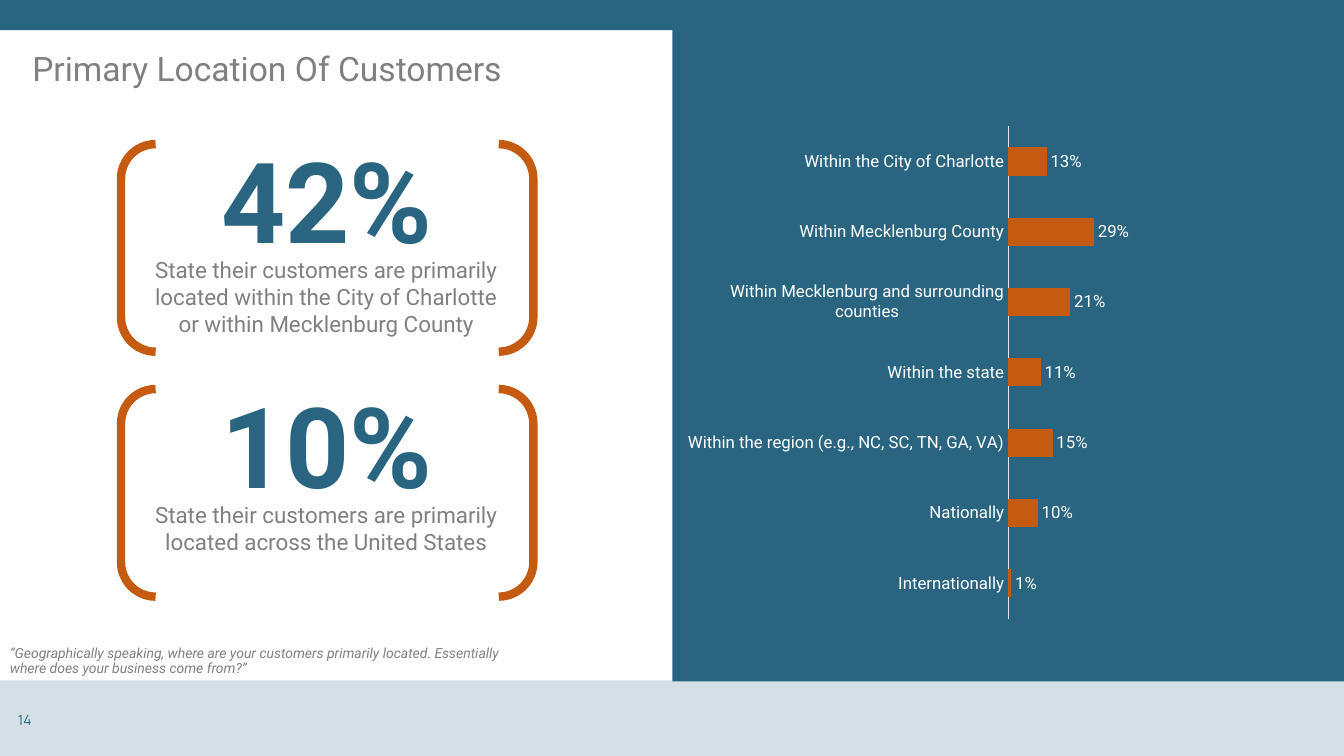
from lxml import etree
from pptx import Presentation
from pptx.chart.data import CategoryChartData as ChartData
from pptx.dml.color import RGBColor
from pptx.enum.chart import XL_CHART_TYPE as Kind, XL_LABEL_POSITION as Spot
from pptx.enum.chart import XL_TICK_MARK as Tick
from pptx.enum.shapes import MSO_SHAPE as Shape
from pptx.enum.text import MSO_ANCHOR as Anchor, MSO_AUTO_SIZE as Fit, PP_ALIGN as Align
from pptx.oxml.ns import qn
from pptx.util import Inches, Pt

TEAL, RUST, GRAY, WHITE = "296581", "C55A11", "808080", "FFFFFF"
PALE, RULE = "D4E0E6", "E7E6E6"

PLACES = [
    ("Internationally", 0.01),
    ("Nationally", 0.10),
    ("Within the region (e.g., NC, SC, TN, GA, VA)", 0.15),
    ("Within the state", 0.11),
    ("Within Mecklenburg and surrounding counties", 0.21),
    ("Within Mecklenburg County", 0.29),
    ("Within the City of Charlotte", 0.13),
]
FACTS = [
    (1.43, "42%", "State their customers are primarily located within "
     "the City of Charlotte or within Mecklenburg County", 0.91),
    (3.86, "10%", "State their customers are primarily located across "
     "the United States", 0.64),
]


def paint(target, color):
    """Give a fill a solid colour."""
    target.solid()
    target.fore_color.rgb = RGBColor.from_string(color)


def style(font, size, color, name="Roboto", bold=False, italic=False):
    """Set size, colour and face of a font."""
    font.size, font.name = Pt(size), name
    font.bold, font.italic = bold, italic
    font.color.rgb = RGBColor.from_string(color)


def place(shape, box):
    """Move a shape to a box given in inches."""
    shape.left, shape.top, shape.width, shape.height = map(Inches, box)


def add_panel(slide, box, color):
    """Add a plain filled rectangle."""
    panel = slide.shapes.add_shape(Shape.RECTANGLE, *map(Inches, box))
    panel.shadow.inherit = False
    paint(panel.fill, color)
    panel.line.fill.background()


def add_text(slide, box, text, size, color, align=Align.LEFT,
             anchor=Anchor.TOP, fit=Fit.NONE, space=1.0, **face):
    """Add a wrapped one-paragraph text box."""
    frame = slide.shapes.add_textbox(*map(Inches, box)).text_frame
    frame.word_wrap, frame.auto_size = True, fit
    frame.vertical_anchor = anchor
    para = frame.paragraphs[0]
    para.text, para.alignment, para.line_spacing = text, align, space
    style(para.font, size, color, **face)


def set_title(slide, box, text):
    """Fill and format the title placeholder."""
    title = slide.shapes.title
    place(title, box)
    frame = title.text_frame
    frame.auto_size, frame.vertical_anchor = Fit.NONE, Anchor.TOP
    para = frame.paragraphs[0]
    para.text, para.alignment, para.line_spacing = text, Align.LEFT, 0.9
    style(para.font, 24, GRAY)


def add_fact(slide, top, figure, text, depth):
    """Add a bracketed figure with its statement."""
    pair = slide.shapes.add_shape(
        Shape.DOUBLE_BRACKET, *map(Inches, (1.2, top, 4.09, 2.06)))
    pair.shadow.inherit = False
    pair.fill.background()
    paint(pair.line.fill, RUST)
    pair.line.width = Pt(6)
    add_text(slide, (1.2, top - 0.17, 4.09, 1.45), figure, 80, TEAL,
             Align.CENTER, fit=Fit.SHAPE_TO_FIT_TEXT, bold=True)
    add_text(slide, (1.42, top + 1.06, 3.63, depth), text, 16, GRAY,
             Align.CENTER, fit=Fit.SHAPE_TO_FIT_TEXT)


def set_plot(chart, x, y, w, h):
    """Fix the inner plot area as fractions of the chart."""
    area = chart._chartSpace.chart.plotArea
    for old in area.findall(qn("c:layout")):
        area.remove(old)
    layout = etree.Element(qn("c:layout"))
    manual = etree.SubElement(layout, qn("c:manualLayout"))
    parts = [("layoutTarget", "inner"), ("xMode", "edge"), ("yMode", "edge"),
             ("x", x), ("y", y), ("w", w), ("h", h)]
    for tag, val in parts:
        etree.SubElement(manual, qn("c:" + tag)).set("val", str(val))
    area.insert(0, layout)


def add_bars(slide, box):
    """Add the bar chart of customer locations."""
    data = ChartData(number_format="0%")
    names, shares = zip(*PLACES)
    data.categories = names
    data.add_series("Series 1", shares)
    chart = slide.shapes.add_chart(
        Kind.BAR_CLUSTERED, *map(Inches, box), data).chart
    chart.has_legend = chart.has_title = False
    style(chart.font, 12, WHITE)
    axis = chart.category_axis
    axis.major_tick_mark = axis.minor_tick_mark = Tick.NONE
    paint(axis.format.line.fill, RULE)
    axis.format.line.width = Pt(0.75)
    scale = chart.value_axis
    scale.visible = scale.has_major_gridlines = False
    scale.minimum_scale, scale.maximum_scale = 0, 1
    plot = chart.plots[0]
    plot.gap_width, plot.vary_by_categories = 150, False
    plot.has_data_labels = True
    labels = plot.data_labels
    labels.show_value, labels.position = True, Spot.OUTSIDE_END
    labels.number_format, labels.number_format_is_linked = "0%", False
    style(labels.font, 12, WHITE)
    paint(plot.series[0].format.fill, RUST)
    set_plot(chart, 0.5, 0.03, 0.44, 0.95)


def main():
    """Build and save the slide."""
    deck = Presentation()
    deck.slide_width, deck.slide_height = Inches(13.33), Inches(7.5)
    slide = deck.slides.add_slide(deck.slide_layouts[5])
    add_panel(slide, (0, 6.75, 13.33, 0.75), PALE)
    add_panel(slide, (6.67, 0, 6.66, 6.76), TEAL)
    add_panel(slide, (0, 0, 13.33, 0.3), TEAL)
    add_text(slide, (0.08, 6.94, 3, 0.4), "14", 10, TEAL,
             anchor=Anchor.MIDDLE, name="Manrope")
    set_title(slide, (0.22, 0.47, 5.36, 0.52), "Primary Location Of Customers")
    add_bars(slide, (6.67, 1.1, 6.66, 5.14))
    add_text(slide, (0, 6.36, 5.36, 0.4),
             "“Geographically speaking, where are your customers primarily "
             "located. Essentially where does your business come from?”",
             10, GRAY, space=0.9, italic=True)
    for fact in FACTS:
        add_fact(slide, *fact)
    deck.save("out.pptx")


if __name__ == "__main__":
    main()
